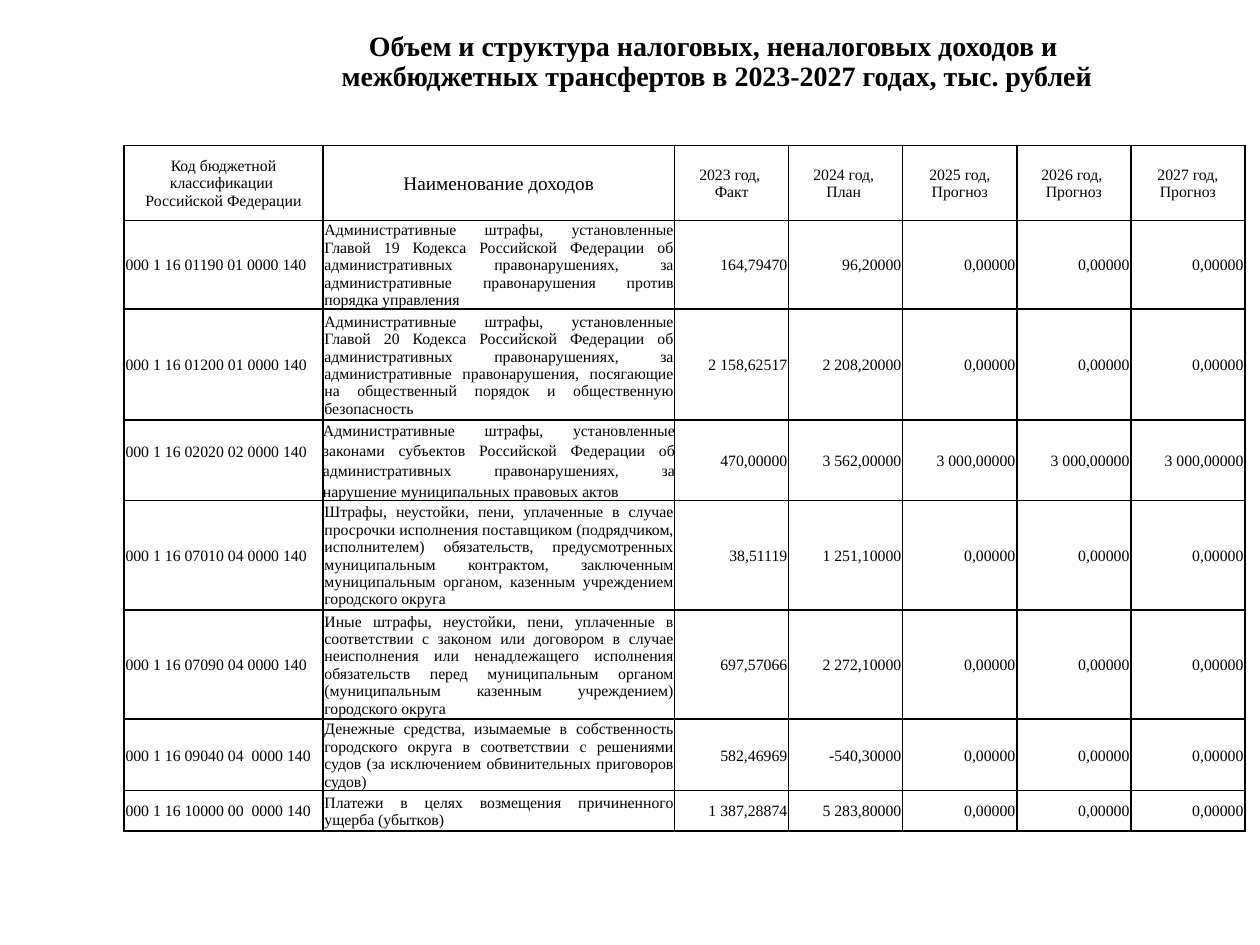
import pptx
import pptx.dml.color
import pptx.enum.text
import pptx.oxml
import pptx.oxml.ns
import pptx.util
from pptx.util import Cm

ALIGN = pptx.enum.text.PP_ALIGN
ANCHOR = pptx.enum.text.MSO_ANCHOR
COLORS = {"text": "000000", "border": "000000"}

# Table contents
HEADERS = [
    ["Код бюджетной классификации ", "Российской Федерации"],
    ["Наименование доходов"],
    ["2023 год, ", "Факт"],
    ["2024 год, ", "План "],
    ["2025 год, Прогноз"],
    ["2026 год, ", "Прогноз"],
    ["2027 год, Прогноз"],
]
ZERO = "0,00000"
INCOME = [
    ("000 1 16 01190 01 0000 140",
     "Административные штрафы, установленные Главой 19 Кодекса Российской Федерации об "
     "административных правонарушениях, за административные правонарушения против "
     "порядка управления",
     "164,79470", "96,20000", ZERO),
    ("000 1 16 01200 01 0000 140",
     "Административные штрафы, установленные Главой 20 Кодекса Российской Федерации об "
     "административных правонарушениях, за административные правонарушения, посягающие "
     "на общественный порядок и общественную безопасность",
     "2 158,62517", "2 208,20000", ZERO),
    ("000 1 16 02020 02 0000 140",
     "Административные штрафы, установленные законами субъектов Российской Федерации об "
     "административных правонарушениях, за нарушение муниципальных правовых актов",
     "470,00000", "3 562,00000", "3 000,00000"),
    ("000 1 16 07010 04 0000 140",
     "Штрафы, неустойки, пени, уплаченные в случае просрочки исполнения поставщиком "
     "(подрядчиком, исполнителем) обязательств, предусмотренных муниципальным "
     "контрактом, заключенным муниципальным органом, казенным учреждением городского округа",
     "38,51119", "1 251,10000", ZERO),
    ("000 1 16 07090 04 0000 140",
     "Иные штрафы, неустойки, пени, уплаченные в соответствии с законом или договором в "
     "случае неисполнения или ненадлежащего исполнения обязательств перед муниципальным "
     "органом (муниципальным казенным учреждением) городского округа ",
     "697,57066", "2 272,10000", ZERO),
    ("000 1 16 09040 04  0000 140",
     "Денежные средства, изымаемые в собственность городского округа в соответствии с "
     "решениями судов (за исключением обвинительных приговоров судов)",
     "582,46969", "-540,30000", ZERO),
    ("000 1 16 10000 00  0000 140",
     "Платежи в целях возмещения причиненного ущерба (убытков)",
     "1 387,28874", "5 283,80000", ZERO),
]
COLUMN_WIDTHS = [4.01, 7.09] + [2.3] * 5
ROW_HEIGHTS = [1.51, 1.78, 2.24, 1.61, 2.21, 2.2, 1.43, 0.81]
LOCAL_LAW_ROW = 3


class BudgetPage:
    font = "Times New Roman"
    inset = Cm(0.03)

    def __init__(self, deck):
        self.page = deck.slides.add_slide(deck.slide_layouts[5])

    def span(self, para, text, size, bold=False):
        span = para.add_run()
        span.text = text
        span.font.name = self.font
        span.font.size = pptx.util.Pt(size)
        span.font.bold = bold
        span.font.color.rgb = pptx.dml.color.RGBColor.from_string(COLORS["text"])

    def title(self, lines, left, top, width, height):
        box = self.page.shapes.title
        box.left, box.top, box.width, box.height = map(Cm, (left, top, width, height))
        frame = box.text_frame
        frame.word_wrap = True
        frame.auto_size = pptx.enum.text.MSO_AUTO_SIZE.NONE
        frame.vertical_anchor = ANCHOR.MIDDLE
        # The deeper lower inset lifts the heading
        frame.margin_top, frame.margin_bottom = Cm(0), Cm(0.71)
        para = frame.paragraphs[0]
        para.alignment = ALIGN.CENTER
        para.line_spacing = 0.9
        for index, line in enumerate(lines):
            if index:
                para.add_line_break()
            self.span(para, line, 16, bold=True)

    def table(self, left, top, widths, heights):
        frame = self.page.shapes.add_table(
            len(heights), len(widths), Cm(left), Cm(top), Cm(sum(widths)), Cm(sum(heights)))
        table = frame.table
        table.first_row = table.horz_banding = False
        for column, width in zip(table.columns, widths):
            column.width = Cm(width)
        for row, height in zip(table.rows, heights):
            row.height = Cm(height)
        return table

    def cell(self, cell, lines, align, size=9):
        cell.fill.background()
        cell.vertical_anchor = ANCHOR.MIDDLE
        cell.margin_left = cell.margin_right = cell.margin_top = self.inset
        cell.margin_bottom = Cm(0)
        for index, line in enumerate(lines):
            frame = cell.text_frame
            para = frame.add_paragraph() if index else frame.paragraphs[0]
            para.alignment = align
            self.span(para, line, size)
        self.borders(cell)

    def borders(self, cell):
        properties = cell._tc.get_or_add_tcPr()
        for index, side in enumerate(("lnL", "lnR", "lnT", "lnB")):
            properties.insert(index, pptx.oxml.parse_xml(
                f'<a:{side} {pptx.oxml.ns.nsdecls("a")} w="12700"><a:solidFill>'
                f'<a:srgbClr val="{COLORS["border"]}"/></a:solidFill></a:{side}>'))


def main():
    deck = pptx.Presentation()
    deck.slide_width, deck.slide_height = Cm(25.4), Cm(19.05)
    budget = BudgetPage(deck)

    # Heading
    budget.title(["Объем и структура налоговых, неналоговых доходов и ",
                  "межбюджетных трансфертов в 2023-2027 годах, тыс. рублей"],
                 6.5, 0.91, 15.9, 1.4)

    # Header row
    table = budget.table(2.5, 2.93, COLUMN_WIDTHS, ROW_HEIGHTS)
    for column, lines in enumerate(HEADERS):
        budget.cell(table.cell(0, column), lines, ALIGN.CENTER, 11 if column == 1 else 9)

    # Income rows: the forecast is the same for all three years
    aligns = [ALIGN.LEFT, ALIGN.JUSTIFY] + [ALIGN.RIGHT] * 5
    for row, (*known, forecast) in enumerate(INCOME, start=1):
        for column, text in enumerate(known + [forecast] * 3):
            budget.cell(table.cell(row, column), [text], aligns[column])

    # The local law row has a raised code and a looser, top-set name
    table.cell(LOCAL_LAW_ROW, 0).margin_bottom = Cm(0.38)
    name = table.cell(LOCAL_LAW_ROW, 1)
    name.vertical_anchor = ANCHOR.TOP
    name.margin_left = name.margin_right = name.margin_top = Cm(0)
    name.text_frame.paragraphs[0].line_spacing = 1.15

    deck.save("out.pptx")


if __name__ == "__main__":
    main()
